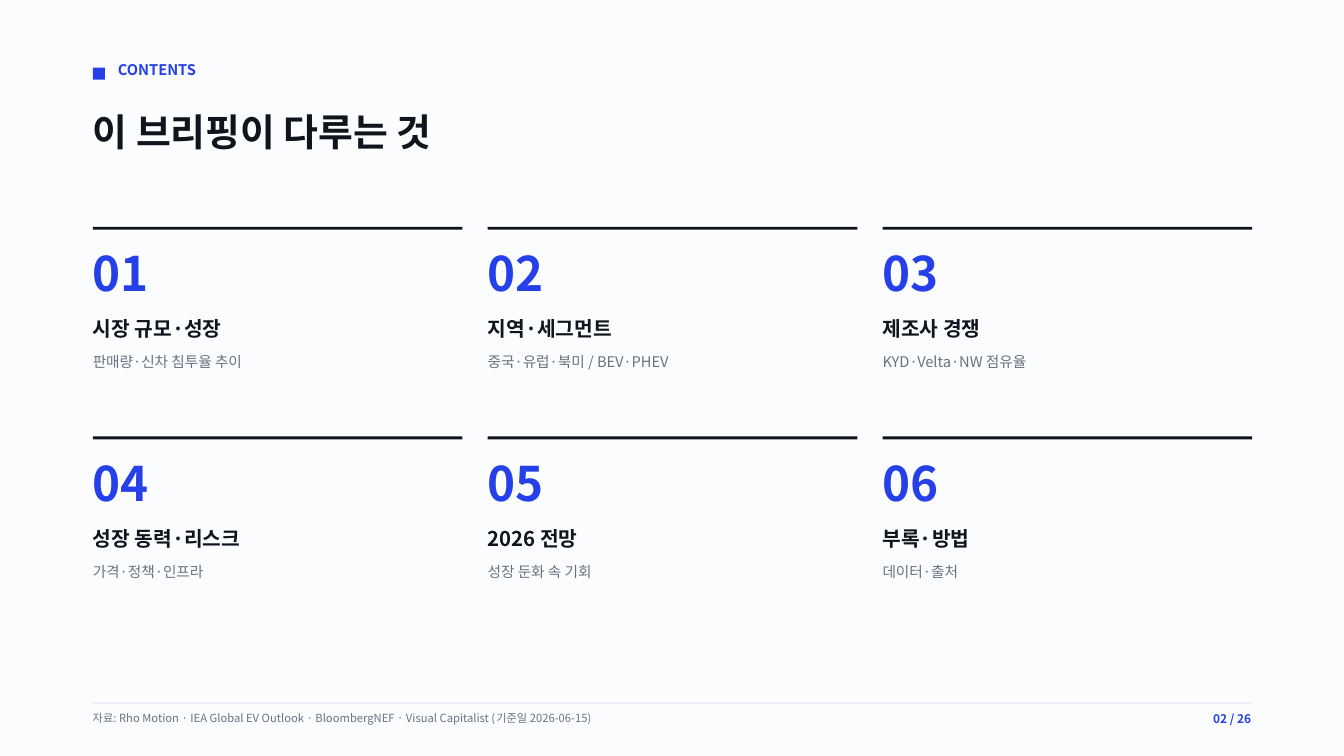
import pptx
import pptx.dml.color
import pptx.enum.shapes
import pptx.enum.text
import pptx.oxml
import pptx.oxml.ns
import pptx.util

Inches = pptx.util.Inches
RGBColor = pptx.dml.color.RGBColor
PP_ALIGN = pptx.enum.text.PP_ALIGN

FONT = "Noto Sans CJK KR"
PAPER = RGBColor(0xFB, 0xFC, 0xFE)
BLUE = RGBColor(0x25, 0x40, 0xE8)
INK = RGBColor(0x10, 0x14, 0x1C)
GRAY = RGBColor(0x69, 0x72, 0x7E)
HAIRLINE = RGBColor(0xE3, 0xE8, 0xF2)

MARGIN = 0.92
CONTENT_WIDTH = 11.5
COLUMNS = 3
COLUMN_GAP = 0.25
COLUMN_WIDTH = (CONTENT_WIDTH - (COLUMNS - 1) * COLUMN_GAP) / COLUMNS
GRID_TOP = 2.25
ROW_STEP = 2.08

SECTIONS = [
    ("시장 규모·성장", "판매량·신차 침투율 추이"),
    ("지역·세그먼트", "중국·유럽·북미 / BEV·PHEV"),
    ("제조사 경쟁", "KYD·Velta·NW 점유율"),
    ("성장 동력·리스크", "가격·정책·인프라"),
    ("2026 전망", "성장 둔화 속 기회"),
    ("부록·방법", "데이터·출처"),
]
SOURCES = ("자료: Rho Motion · IEA Global EV Outlook · BloombergNEF · "
           "Visual Capitalist (기준일 2026-06-15)")


def add_block(slide, left, top, width, height, color):
    """Plain filled rectangle, used for the marker and all rules."""
    block = slide.shapes.add_shape(
        pptx.enum.shapes.MSO_SHAPE.RECTANGLE,
        Inches(left), Inches(top), Inches(width), Inches(height))
    block.shadow.inherit = False
    block.fill.solid()
    block.fill.fore_color.rgb = color
    block.line.fill.background()


def add_label(slide, left, top, width, height, text, size, color,
              bold=False, wrap=True, align=PP_ALIGN.LEFT):
    """One-line text box without insets."""
    label = slide.shapes.add_textbox(
        Inches(left), Inches(top), Inches(width), Inches(height))
    frame = label.text_frame
    frame.margin_left = frame.margin_right = 0
    frame.margin_top = frame.margin_bottom = 0
    frame.word_wrap = wrap
    frame.auto_size = pptx.enum.text.MSO_AUTO_SIZE.SHAPE_TO_FIT_TEXT
    frame.text = text
    paragraph = frame.paragraphs[0]
    paragraph.alignment = align
    run = paragraph.runs[0]
    run.font.name = FONT
    run.font.size = pptx.util.Pt(size)
    run.font.bold = bold
    run.font.color.rgb = color
    # Hangul takes the East Asian typeface
    east_asian = pptx.oxml.parse_xml(
        f'<a:ea {pptx.oxml.ns.nsdecls("a")} typeface="{FONT}"/>')
    run.font._element.find(pptx.oxml.ns.qn("a:latin")).addnext(east_asian)


def add_section(slide, index, title, summary):
    """Rule, number, title and summary in one grid cell."""
    row, column = divmod(index, COLUMNS)
    left = MARGIN + column * (COLUMN_WIDTH + COLUMN_GAP)
    top = GRID_TOP + row * ROW_STEP
    add_block(slide, left, top, COLUMN_WIDTH, 0.03, INK)
    add_label(slide, left, top + 0.17, COLUMN_WIDTH, 0.57,
              f"{index + 1:02d}", 34, BLUE, bold=True)
    add_label(slide, left, top + 0.89, COLUMN_WIDTH, 0.24,
              title, 14.5, INK, bold=True)
    add_label(slide, left, top + 1.25, COLUMN_WIDTH, 0.18,
              summary, 10.5, GRAY)


def add_header(slide):
    add_block(slide, MARGIN, 0.67, 0.12, 0.12, BLUE)
    add_label(slide, 1.17, 0.6, 0.78, 0.18, "CONTENTS", 10.5, BLUE,
              bold=True, wrap=False)
    add_label(slide, MARGIN, 1.08, CONTENT_WIDTH, 0.45,
              "이 브리핑이 다루는 것", 27, INK, bold=True)


def add_footer(slide):
    add_block(slide, MARGIN, 6.97, CONTENT_WIDTH, 0.01, HAIRLINE)
    add_label(slide, MARGIN, 7.06, 10.67, 0.13, SOURCES, 8, GRAY)
    add_label(slide, 11.58, 7.06, 0.83, 0.14, "02 / 26", 8.5, BLUE,
              bold=True, align=PP_ALIGN.RIGHT)


def main():
    deck = pptx.Presentation()
    deck.slide_width = Inches(13.33)
    deck.slide_height = Inches(7.5)
    slide = deck.slides.add_slide(deck.slide_layouts[6])
    slide.background.fill.solid()
    slide.background.fill.fore_color.rgb = PAPER

    # Heading
    add_header(slide)
    # Grid of sections
    for index, (title, summary) in enumerate(SECTIONS):
        add_section(slide, index, title, summary)
    # Sources and page number
    add_footer(slide)

    deck.save("out.pptx")


if __name__ == "__main__":
    main()
